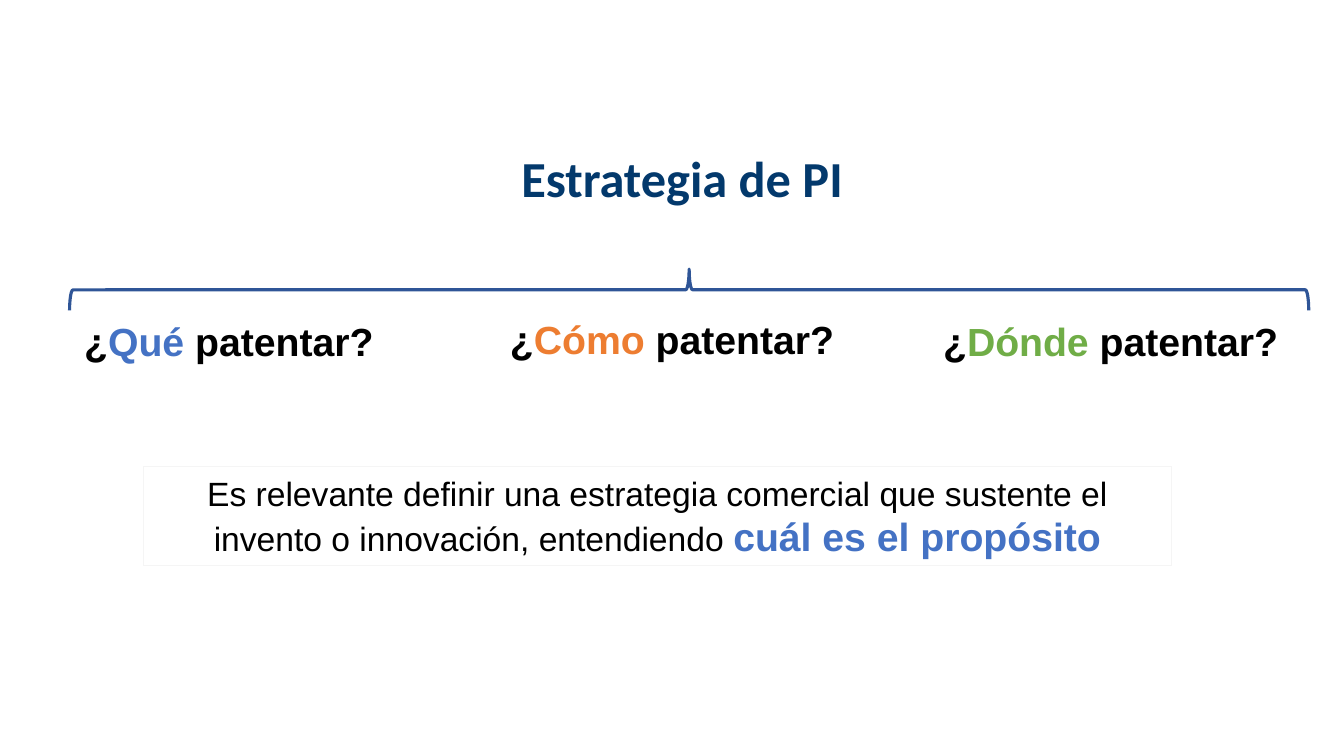
from dataclasses import dataclass

from pptx import Presentation
from pptx import util as u
from pptx.dml.color import RGBColor
from pptx.enum import shapes, text

HUES = {
    "navy": "03396C",
    "black": "000000",
    "blue": "4472C4",
    "orange": "ED7D31",
    "green": "70AD47",
    "brace": "2F5597",
    "frame": "F5F5F5",
}


@dataclass
class Run:
    text: str
    hue: str = "black"
    size: int = 28
    bold: bool = True


@dataclass
class Query:
    word: str
    hue: str
    left: float
    top: float
    width: float


QUERIES = [
    Query("Qué", "blue", 0.35, 3.1, 3.84),
    Query("Cómo", "orange", 4.5, 3.08, 4.33),
    Query("Dónde", "green", 8.83, 3.1, 4.37),
]


def color(name: str) -> RGBColor:
    return RGBColor.from_string(HUES[name])


def place(shape, left: float, top: float, width: float, height: float) -> None:
    shape.left, shape.top = u.Inches(left), u.Inches(top)
    shape.width, shape.height = u.Inches(width), u.Inches(height)


def write(shape, runs: list[Run], font: str = "Arial",
          align=text.PP_ALIGN.CENTER, anchor=text.MSO_ANCHOR.TOP,
          wrap: bool = True) -> None:
    frame = shape.text_frame
    frame.word_wrap = wrap
    frame.auto_size = text.MSO_AUTO_SIZE.NONE
    frame.vertical_anchor = anchor
    frame.margin_left = frame.margin_right = u.Inches(0.1)
    frame.margin_top = frame.margin_bottom = u.Inches(0.05)
    para = frame.paragraphs[0]
    para.alignment = align
    for item in runs:
        run = para.add_run()
        run.text = item.text
        run.font.name = font
        run.font.size = u.Pt(item.size)
        run.font.bold = item.bold
        run.font.color.rgb = color(item.hue)


def outline(slide, kind, box: tuple, hue: str, width: float):
    shape = slide.shapes.add_shape(kind, *map(u.Inches, box))
    shape.shadow.inherit = False
    shape.fill.background()
    shape.line.color.rgb = color(hue)
    shape.line.width = u.Pt(width)
    return shape


def ask(slide, query: Query) -> None:
    box = slide.shapes.add_textbox(0, 0, 0, 0)
    place(box, query.left, query.top, query.width, 0.57)
    write(box, [Run("¿"), Run(query.word, query.hue), Run(" patentar?")])


def main() -> None:
    deck = Presentation()
    deck.slide_width, deck.slide_height = u.Inches(13.33), u.Inches(7.5)
    slide = deck.slides.add_slide(deck.slide_layouts[5])

    # Title
    title = slide.shapes.title
    place(title, 5.07, 1.41, 3.53, 0.71)
    write(title, [Run("Estrategia de PI", "navy", 36)], font="Calibri",
          align=text.PP_ALIGN.LEFT, wrap=False)

    # Framed conclusion
    note = outline(slide, shapes.MSO_SHAPE.RECTANGLE,
                   (1.42, 4.63, 10.2, 0.98), "frame", 0.75)
    write(note, [
        Run("Es relevante definir una estrategia comercial que sustente el "
            "invento o innovación, entendiendo ", size=24, bold=False),
        Run("cuál es el propósito", "blue"),
    ], anchor=text.MSO_ANCHOR.MIDDLE)

    # Three questions
    for query in QUERIES:
        ask(slide, query)

    # Brace from the title to the questions
    brace = outline(slide, shapes.MSO_SHAPE.LEFT_BRACE,
                    (6.63, -3.27, 0.41, 12.29), "brace", 2.25)
    brace.rotation = 90

    deck.save("out.pptx")


if __name__ == "__main__":
    main()
